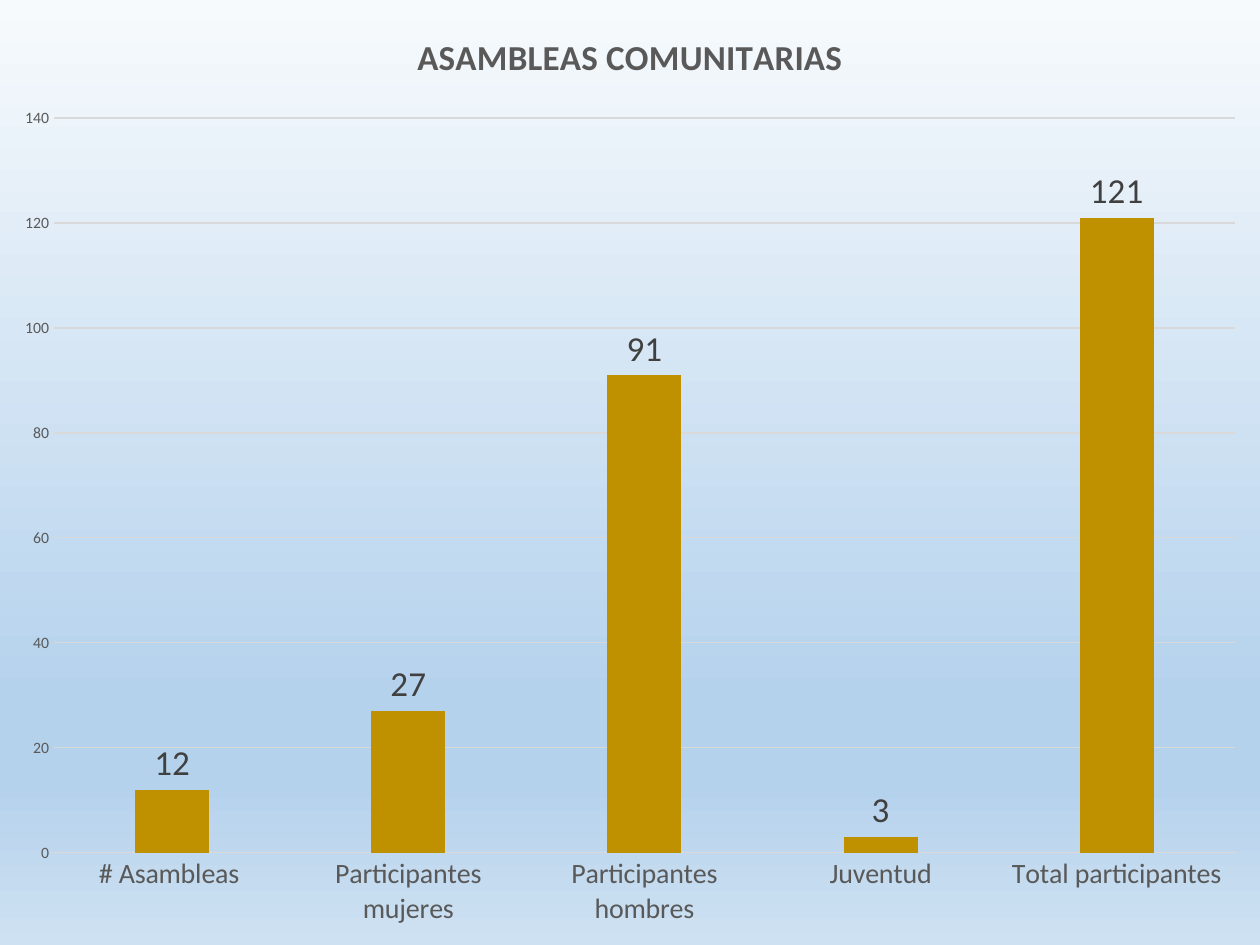
from lxml import etree
from pptx import Presentation
from pptx.chart.data import CategoryChartData
from pptx.dml.color import RGBColor
from pptx.enum.chart import XL_CHART_TYPE, XL_LABEL_POSITION, XL_TICK_MARK
from pptx.oxml.ns import qn
from pptx.util import Inches, Pt

GOLD = RGBColor(0xBF, 0x90, 0x00)
GRAY = RGBColor(0x59, 0x59, 0x59)
DARK = RGBColor(0x40, 0x40, 0x40)
LINE = RGBColor(0xD9, 0xD9, 0xD9)
SKY_TOP = RGBColor(0xF7, 0xFA, 0xFD)
SKY_MID = RGBColor(0xB5, 0xD2, 0xEC)
SKY_END = RGBColor(0xCE, 0xE1, 0xF2)
FONT = "Calibri"


def style_font(font, size, color, bold=False):
    font.name = FONT
    font.size = Pt(size)
    font.bold = bold
    font.color.rgb = color


prs = Presentation()
prs.slide_width, prs.slide_height = Inches(10), Inches(7.5)
s = prs.slides.add_slide(prs.slide_layouts[6])

# Background gradient, top to bottom
fill = s.background.fill
fill.gradient()
fill.gradient_angle = 270
stops = s.element.find(".//" + qn("a:gsLst"))
for old in list(stops):
    stops.remove(old)
for percent, color in [(0, SKY_TOP), (74, SKY_MID), (83, SKY_MID), (100, SKY_END)]:
    stop = etree.SubElement(stops, qn("a:gs"), pos=str(percent * 1000))
    etree.SubElement(stop, qn("a:srgbClr"), val=str(color))

# Chart
data = CategoryChartData()
data.categories = ["# Asambleas ", "Participantes mujeres", "Participantes hombres",
                   "Juventud", "Total participantes"]
data.add_series("Series 1", [12, 27, 91, 3, 121])
chart = s.shapes.add_chart(XL_CHART_TYPE.COLUMN_CLUSTERED, 0, 0,
                           Inches(10), Inches(7.5), data).chart
chart.has_legend = False
chart.font.name = FONT
chart.font.size = Pt(10)

chart.has_title = True
p = chart.chart_title.text_frame.paragraphs[0]
p.text = "ASAMBLEAS COMUNITARIAS"
style_font(p.font, 20, GRAY, bold=True)
chart.chart_title.include_in_layout = False

# Axes
cat, val = chart.category_axis, chart.value_axis
for axis, size in [(cat, 16), (val, 9)]:
    axis.major_tick_mark = axis.minor_tick_mark = XL_TICK_MARK.NONE
    style_font(axis.tick_labels.font, size, GRAY)
val.minimum_scale, val.maximum_scale, val.major_unit = 0, 140, 20
val.format.line.fill.background()
for line in (cat.format.line, val.major_gridlines.format.line):
    line.color.rgb = LINE
    line.width = Pt(0.75)

# Columns and their values
plot = chart.plots[0]
plot.gap_width = 219
plot.overlap = -27
plot.vary_by_categories = False
series = plot.series[0]
series.format.fill.solid()
series.format.fill.fore_color.rgb = GOLD
labels = series.data_labels
labels.show_value = True
labels.position = XL_LABEL_POSITION.OUTSIDE_END
style_font(labels.font, 20, DARK)

prs.save("out.pptx")
